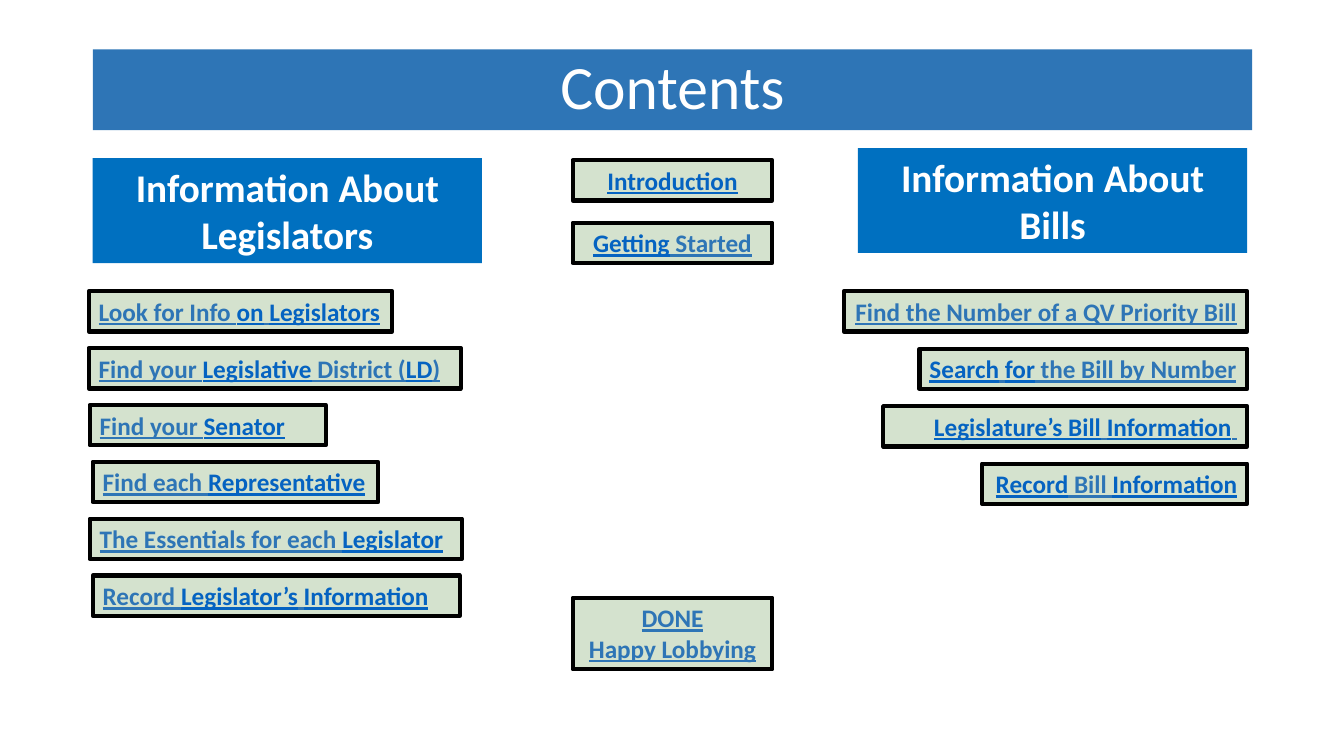
from dataclasses import dataclass

from pptx import Presentation
from pptx.dml.color import RGBColor
from pptx.enum.shapes import MSO_SHAPE
from pptx.enum.text import MSO_ANCHOR, MSO_AUTO_SIZE, PP_ALIGN
from pptx.util import Inches, Pt

RECT = MSO_SHAPE.RECTANGLE
TOP, MIDDLE = MSO_ANCHOR.TOP, MSO_ANCHOR.MIDDLE
NO_FIT = MSO_AUTO_SIZE.NONE
LEFT, CENTER, RIGHT = PP_ALIGN.LEFT, PP_ALIGN.CENTER, PP_ALIGN.RIGHT
FONT = "Calibri"
COLORS = {
    "title": "2E75B6",
    "heading": "0070C0",
    "entry": "D4E2CE",
    "border": "000000",
    "light": "FFFFFF",
    "soft": "2E75B6",
    "link": "0563C1",
}
FIRST_ROW = 2.89
LEFT_STEP = (5.71 - FIRST_ROW) / 5
RIGHT_STEP = 0.57
RIGHT_EDGE = 12.37


@dataclass
class Box:
    """A filled box; "|" in its text switches between the two text colours."""

    text: str
    left: float
    top: float
    width: float
    height: float = 0.4
    align: PP_ALIGN = LEFT
    fill: str = "entry"
    size: int = 18
    inks: tuple[str, str] = ("soft", "link")
    is_entry: bool = True


def rgb(name: str) -> RGBColor:
    """Look up a named colour."""
    return RGBColor.from_string(COLORS[name])


def add_run(p, text: str, size: int, ink: str):
    """Append a run in the slide font and return it."""
    r = p.add_run()
    r.text = text
    r.font.name = FONT
    r.font.size = Pt(size)
    r.font.color.rgb = rgb(ink)
    return r


def add_title(s) -> None:
    """Place and format the title placeholder."""
    sp = s.shapes.title
    sp.left, sp.top = Inches(0.92), Inches(0.49)
    sp.width, sp.height = Inches(11.5), Inches(0.8)
    sp.fill.solid()
    sp.fill.fore_color.rgb = rgb("title")
    tf = sp.text_frame
    tf.auto_size = NO_FIT
    tf.vertical_anchor = MIDDLE
    p = tf.paragraphs[0]
    p.alignment = CENTER
    p.line_spacing = 0.9
    add_run(p, "Contents", 44, "light")


def add_box(s, box: Box) -> None:
    """Draw one heading or contents entry."""
    sp = s.shapes.add_shape(RECT, Inches(box.left), Inches(box.top),
                            Inches(box.width), Inches(box.height))
    sp.shadow.inherit = False
    sp.fill.solid()
    sp.fill.fore_color.rgb = rgb(box.fill)
    if box.is_entry:
        sp.line.color.rgb = rgb("border")
        sp.line.width = Pt(3)
    else:
        sp.line.fill.background()
    tf = sp.text_frame
    tf.word_wrap = True
    tf.vertical_anchor = TOP
    tf.margin_left = Inches(0.05 if box.align == RIGHT else 0.1)
    tf.margin_right = Inches(0.05 if box.align == LEFT else 0.1)
    for i, line in enumerate(box.text.split("\n")):
        p = tf.add_paragraph() if i else tf.paragraphs[0]
        p.alignment = box.align
        for j, part in enumerate(line.split("|")):
            if part:
                r = add_run(p, part, box.size, box.inks[j % 2])
                r.font.bold = True
                r.font.underline = box.is_entry


def heading(text: str, left: float, top: float) -> Box:
    """Describe a column heading."""
    return Box(text, left, top, 3.86, 1.04, CENTER, "heading", 28,
               ("light", "light"), False)


def center_entry(text: str, top: float, height: float = 0.4) -> Box:
    """Describe an entry of the middle column."""
    return Box(text, 5.68, top, 1.98, height, CENTER)


LEGISLATOR_ENTRIES = [
    ("Look for Info |on| |Legislators", 0.88, 3.01),
    ("Find your |Legislative| District (|LD|)", 0.88, 3.69),
    ("Find your |Senator", 0.89, 2.34),
    ("Find each |Representative", 0.92, 2.83),
    ("The Essentials for each |Legislator", 0.89, 3.69),
    ("Record |Legislator’s| |Information", 0.92, 3.64),
]
BILL_ENTRIES = [
    ("Find the Number of a QV Priority Bill", 4, RIGHT),
    ("|Search| |for| the Bill by Number", 3.25, LEFT),
    ("|Legislature’s Bill| |Information| ", 3.61, RIGHT),
    ("|Record| Bill |Information", 2.63, RIGHT),
]
BOXES = [
    heading("Information About Legislators", 0.92, 1.57),
    heading("Information About Bills", 8.51, 1.47),
    center_entry("|Introduction", 1.59),
    center_entry("|Getting| Started", 2.21),
    center_entry("DONE\nHappy Lobbying", 5.93, 0.71),
    *(Box(text, left, FIRST_ROW + i * LEFT_STEP, width)
      for i, (text, left, width) in enumerate(LEGISLATOR_ENTRIES)),
    *(Box(text, RIGHT_EDGE - width, FIRST_ROW + i * RIGHT_STEP, width, align=align)
      for i, (text, width, align) in enumerate(BILL_ENTRIES)),
]


def main() -> None:
    """Build and save the contents slide."""
    prs = Presentation()
    prs.slide_width, prs.slide_height = Inches(13.33), Inches(7.5)
    s = prs.slides.add_slide(prs.slide_layouts[5])
    add_title(s)
    for box in BOXES:
        add_box(s, box)
    prs.save("out.pptx")


if __name__ == "__main__":
    main()
